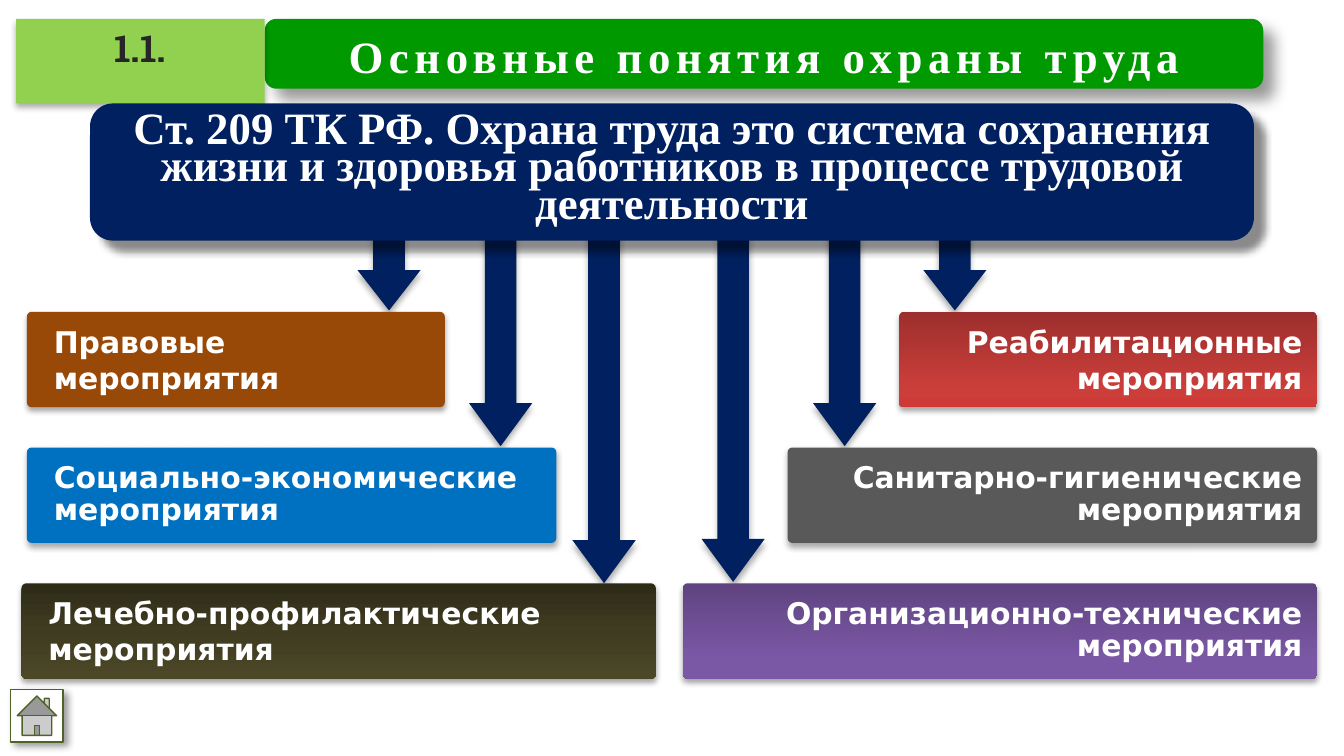
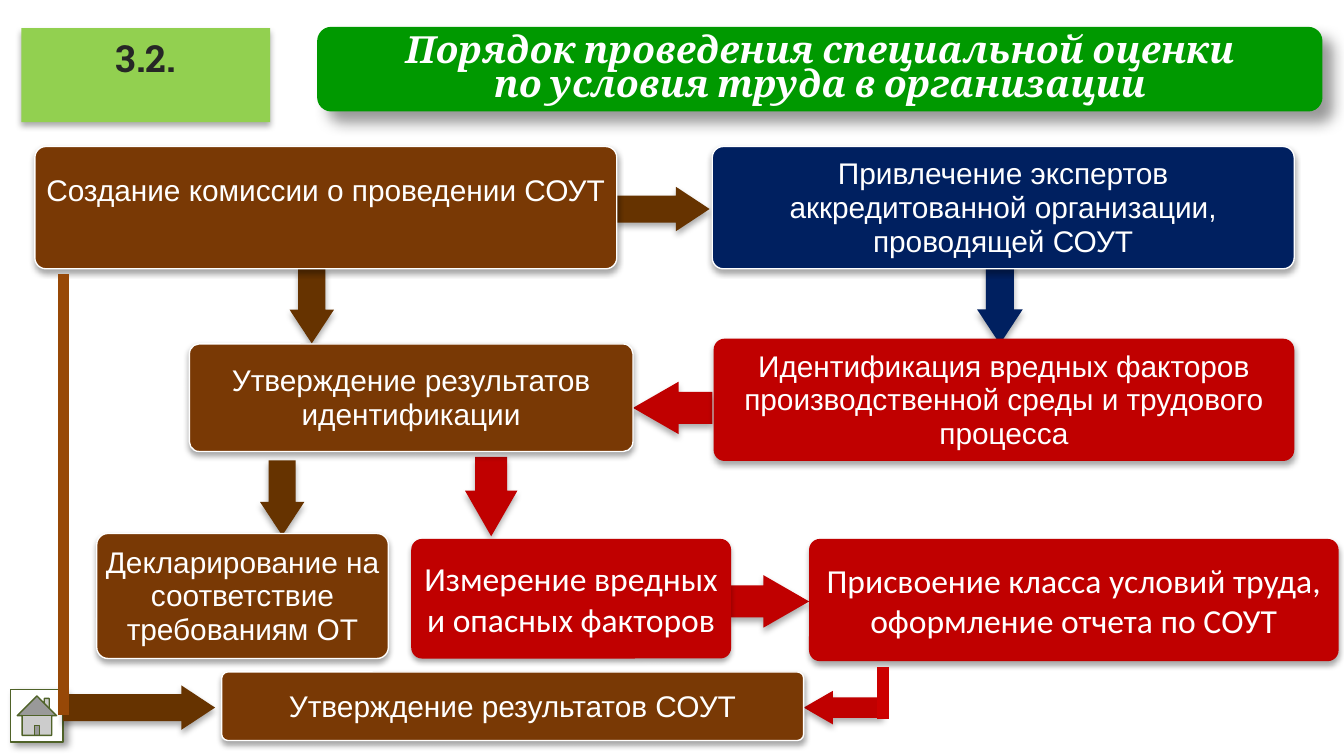
from copy import deepcopy
from dataclasses import dataclass

from lxml.etree import SubElement
from pptx import Presentation
from pptx.dml.color import RGBColor
from pptx.enum.shapes import MSO_CONNECTOR, MSO_SHAPE
from pptx.enum.text import MSO_ANCHOR, MSO_AUTO_SIZE, PP_ALIGN
from pptx.oxml.ns import qn
from pptx.util import Emu, Inches, Pt


@dataclass(frozen=True)
class Theme:
    white: str = "FFFFFF"
    ink: str = "262626"
    title: str = "009900"
    badge: str = "92D050"
    home: str = "4F6228"
    navy: str = "002060"
    brown: str = "793905"
    dark_brown: str = "663300"
    trunk: str = "974807"
    red: str = "C00000"
    branch: str = "CC0000"
    legal: str = "984807"
    social: str = "0070C0"
    sanitary: str = "595959"
    medical: tuple = ((0, "2D2A17"), (0.5, "403C21"), (1, "4C4727"))
    rehabilitation: tuple = ((0, "9C2F2D"), (0.8, "CB3E3A"), (1, "CE3B37"))
    technical: tuple = ((0, "5F4480"), (0.8, "7B58A6"), (1, "7C57A8"))
    small: int = 16
    medium: int = 18
    large: int = 20
    huge: int = 24
    arrow_shadow: tuple = (32, 3.5, 2.2, 90)
    box_shadow: tuple = (35, 3.1, 1.8, 90)
    banner_shadow: tuple = (45, 4, 8, 45)
    title_shadow: tuple = (40, 8, 8, 45)
    home_shadow: tuple = (40, 4, 3, 45)


theme = Theme()
deck = Presentation()
deck.slide_width = Inches(10)
deck.slide_height = deck.slide_width * 9 // 16
COLUMN = deck.slide_width / 100
ROW = deck.slide_height / 56.25


def place(page, kind, spot, fill, shadow, outline=None, adjust=(), turn=0):
    left, top, width, height = (
        Emu(round(cells * unit)) for cells, unit in zip(spot, (COLUMN, ROW) * 2)
    )
    shape = page.shapes.add_shape(kind, left, top, width, height)
    for index, value in enumerate(adjust):
        shape.adjustments[index] = value
    shape.rotation = turn
    if isinstance(fill, str):
        shape.fill.solid()
        shape.fill.fore_color.rgb = RGBColor.from_string(fill)
    else:
        shape.fill.gradient()
        shape.fill.gradient_angle = 270
        stops = next(shape.element.spPr.iter(qn("a:gsLst")))
        stops.append(deepcopy(stops[0]))
        for stop, (position, color) in zip(shape.fill.gradient_stops, fill):
            stop.position = position
            stop.color.rgb = RGBColor.from_string(color)
    if outline:
        shape.line.color.rgb = RGBColor.from_string(outline)
        shape.line.width = Pt(0.75)
    else:
        shape.line.fill.background()
    shape.shadow.inherit = False
    opacity, blur, distance, angle = shadow
    glow = SubElement(
        shape.element.spPr.find(qn("a:effectLst")), qn("a:outerShdw"),
        blurRad=str(Pt(blur)), dist=str(Pt(distance)), dir=str(angle * 60000),
        algn="tl", rotWithShape="0",
    )
    black = SubElement(glow, qn("a:srgbClr"), val="000000")
    SubElement(black, qn("a:alpha"), val=str(opacity * 1000))
    return shape


def write(shape, text, font="Arial", size=theme.small, color=theme.white, bold=False,
          italic=False, align=PP_ALIGN.CENTER, anchor=MSO_ANCHOR.MIDDLE, wrap=True,
          insets=(0.1, 0.05, 0.1, 0.05), leading=None, after=None, tracking=None):
    frame = shape.text_frame
    frame.auto_size = MSO_AUTO_SIZE.NONE
    frame.word_wrap = wrap
    frame.vertical_anchor = anchor
    frame.margin_left, frame.margin_top, frame.margin_right, frame.margin_bottom = map(Inches, insets)
    for index, words in enumerate(text.split("\n")):
        para = frame.add_paragraph() if index else frame.paragraphs[0]
        para.text = words
        para.alignment = align
        para.line_spacing = leading
        para.space_after = after
        for span in para.runs:
            span.font.name = font
            span.font.size = Pt(size)
            span.font.bold = bold
            span.font.italic = italic
            span.font.color.rgb = RGBColor.from_string(color)
            if tracking:
                span.font._element.set("spc", str(tracking * 100))


headings = [
    ("1.1.", (1.2, 1.4, 18.5, 6.3), "Основные понятия охраны труда", (19.7, 1.4, 74.3, 5.2),
     dict(font="Times New Roman", size=theme.huge, tracking=3)),
    ("3.2.", (1.6, 2.1, 18.5, 7),
     "Порядок проведения специальной оценки\vпо условия труда в организации", (23.6, 2, 74.8, 6.3),
     dict(font="Cambria", size=theme.large, italic=True, leading=Pt(18))),
]
pages = []
for number, badge_spot, heading, title_spot, look in headings:
    page = deck.slides.add_slide(deck.slide_layouts[5])
    pages.append(page)
    bar = place(page, MSO_SHAPE.ROUNDED_RECTANGLE, title_spot, theme.title, theme.title_shadow)
    title = page.shapes.title
    title.left, title.top, title.width, title.height = bar.left, bar.top, bar.width, bar.height
    bar.element.addnext(title.element)
    write(title, heading, bold=True, insets=(0.1, 0.08, 0.1, 0.05), **look)
    badge = place(page, MSO_SHAPE.RECTANGLE, badge_spot, theme.badge, theme.arrow_shadow)
    write(badge, number, font="Roboto Slab", size=theme.large, color=theme.ink, bold=True,
          anchor=MSO_ANCHOR.TOP, wrap=False)
    place(page, MSO_SHAPE.ACTION_BUTTON_HOME, (0.8, 51.3, 3.9, 3.9), theme.white,
          theme.home_shadow, theme.home)
concepts, assessment = pages

for left, top, height, head in [
    (34.9, 15.1, 18.1, 0.68), (42.6, 15.8, 27.6, 0.68), (52.2, 15.7, 27.6, 0.68),
    (60.5, 15.1, 18.1, 0.68), (68.7, 15.2, 7.9, 0.64), (26.6, 15.2, 7.9, 0.64),
]:
    place(concepts, MSO_SHAPE.DOWN_ARROW, (left, top, 4.7, height), theme.navy,
          theme.arrow_shadow, adjust=(0.5, head))

tight = dict(leading=0.9, after=Pt(5.6))
measures = [
    (31.1, 2, "Правовые мероприятия", theme.legal, {},
     "Реабилитационные мероприятия", theme.rehabilitation, {}),
    (39.4, 2, "Социально-экономические мероприятия", theme.social, tight,
     "Санитарно-гигиенические мероприятия", theme.sanitary, tight),
    (47.2, 1.6, "Лечебно-профилактические\nмероприятия", theme.medical, {},
     "Организационно-технические мероприятия", theme.technical, tight),
]
for row, (width, left, left_text, left_fill, left_look, right_text, right_fill, right_look) in enumerate(measures):
    for edge, text, fill, look, align in [
        (left, left_text, left_fill, left_look, PP_ALIGN.LEFT),
        (98 - width, right_text, right_fill, right_look, PP_ALIGN.RIGHT),
    ]:
        card = place(concepts, MSO_SHAPE.ROUNDED_RECTANGLE, (edge, 23.2 + 10.1 * row, width, 7.1),
                     fill, theme.box_shadow, adjust=(0.05,))
        write(card, text, font="DejaVu Sans", bold=True, align=align,
              insets=(0.19, 0.11, 0.1, 0.11), **look)

banner = place(concepts, MSO_SHAPE.ROUNDED_RECTANGLE, (6.7, 7.7, 86.6, 10.2), theme.navy,
               theme.banner_shadow)
write(banner, "Ст. 209 ТК РФ. Охрана труда это система сохранения жизни и здоровья "
      "работников в процессе трудовой деятельности",
      font="Times New Roman", size=theme.huge, bold=True, leading=Pt(20))

for spot, turn, color, head in [
    ((20.4, 21.1, 5.6, 3.3), 270, theme.dark_brown, 0.76),
    ((70.3, 19.8, 8.2, 3.4), 270, theme.navy, 0.76),
    ((59.8, 51.4, 5.9, 2.5), 0, theme.red, 0.87),
    ((54.3, 42.8, 5.9, 3.9), 180, theme.red, 0.87),
    ((45.9, 13.9, 6.9, 3.3), 180, theme.dark_brown, 0.76),
    ((47.1, 28.4, 5.9, 3.9), 0, theme.red, 0.87),
    ((18.2, 35.4, 5.6, 3.3), 270, theme.dark_brown, 0.76),
    ((33.6, 35, 5.9, 3.9), 270, theme.red, 0.87),
    ((4.7, 51, 11.3, 3.3), 180, theme.dark_brown, 0.76),
]:
    place(assessment, MSO_SHAPE.LEFT_ARROW, spot, color, theme.arrow_shadow,
          adjust=(0.61, head), turn=turn)

plain = dict(leading=Pt(18))
report = dict(font="Calibri", size=theme.medium)
for spot, text, fill, look, bottom in [
    ((53, 10.9, 43.3, 9.1), "Привлечение экспертов аккредитованной организации, проводящей СОУТ",
     theme.navy, plain, 0.04),
    ((2.6, 10.9, 43.3, 9.1), "Создание комиссии о проведении СОУТ", theme.brown, plain, 0.29),
    ((60.2, 40.1, 39.4, 9.1), "Присвоение класса условий труда, оформление отчета по СОУТ",
     theme.red, report, 0.04),
    ((14.1, 25.6, 33, 8), "Утверждение результатов идентификации", theme.brown, plain, 0.04),
    ((30.6, 40.1, 23.8, 8.9), "Измерение вредных и опасных факторов", theme.red, report, 0.04),
    ((7.2, 39.7, 21.7, 9.3), "Декларирование на соответствие требованиям ОТ", theme.brown, plain, 0.04),
    ((16.5, 50, 43.3, 5.1), "Утверждение результатов СОУТ", theme.brown, plain, 0.04),
    ((53.1, 25.2, 43.2, 9.1), "Идентификация вредных факторов производственной среды и трудового процесса",
     theme.red, plain, 0.04),
]:
    step = place(assessment, MSO_SHAPE.ROUNDED_RECTANGLE, spot, fill, theme.box_shadow,
                 None if fill == theme.red else theme.white, adjust=(0.09,))
    write(step, text, insets=(0.04, 0.04, 0.04, bottom), **look)

for column, start, end, color in [(65.7, 53.5, 49.6, theme.branch), (4.7, 20.4, 53.2, theme.trunk)]:
    across = round(column * COLUMN)
    link = assessment.shapes.add_connector(
        MSO_CONNECTOR.STRAIGHT, across, round(start * ROW), across, round(end * ROW))
    link.line.color.rgb = RGBColor.from_string(color)
    link.line.width = Pt(6)
    SubElement(link.element.spPr, qn("a:effectLst"))

deck.save("out.pptx")
